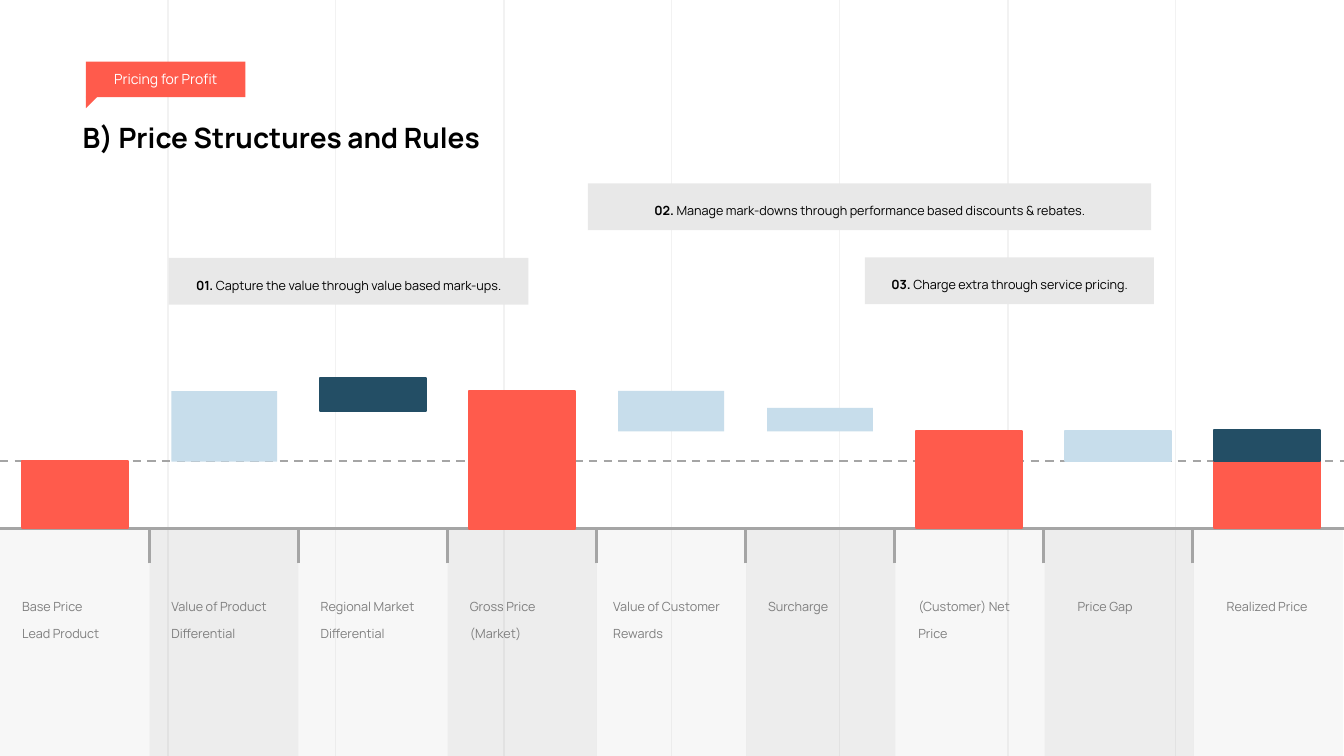
from pptx import Presentation
from pptx.dml.color import RGBColor
from pptx.enum.dml import MSO_LINE
from pptx.enum.shapes import MSO_CONNECTOR, MSO_SHAPE
from pptx.enum.text import MSO_ANCHOR, PP_ALIGN
from pptx.oxml.ns import qn
from pptx.util import Pt
from lxml.etree import SubElement


class Theme:
    font = "Manrope"
    title, tag, body = 20, 10, 9
    black, white = "000000", "FFFFFF"
    red, navy, sky = "FF5B4C", "234E65", "C7DDEB"
    note, label, rule, pale, grid = "E8E8E8", "7F7F7F", "A5A5A5", "D8D8D8", "F2F2F2"


WIDE, HIGH = 960, 540
STEP = 106.6  # column width
BASE = 377.3  # axis height on the slide
LEVEL = 329  # base price level

deck = Presentation()
deck.slide_width, deck.slide_height = Pt(WIDE), Pt(HIGH)
slide = deck.slides.add_slide(deck.slide_layouts[6])
shapes = slide.shapes


def box(x, y, w, h, fill, kind=MSO_SHAPE.RECTANGLE, edge=False, alpha=None):
    """Draw a filled shape; edge adds an outline in the fill colour."""
    shape = shapes.add_shape(kind, Pt(x), Pt(y), Pt(w), Pt(h))
    shape.shadow.inherit = False
    shape.fill.solid()
    shape.fill.fore_color.rgb = RGBColor.from_string(fill)
    if edge:
        shape.line.color.rgb = RGBColor.from_string(fill)
        shape.line.width = Pt(1.5)
    else:
        shape.line.fill.background()
    if alpha:
        tint = shape.fill._xPr.find(f"{qn('a:solidFill')}/{qn('a:srgbClr')}")
        SubElement(tint, qn("a:alpha")).set("val", str(alpha * 1000))
    return shape


def rule(x1, y1, x2, y2, color, width):
    line = shapes.add_connector(MSO_CONNECTOR.STRAIGHT, Pt(x1), Pt(y1), Pt(x2), Pt(y2))
    line.line.color.rgb = RGBColor.from_string(color)
    line.line.width = Pt(width)
    SubElement(line._element.spPr, qn("a:effectLst"))
    return line


# Background grid
for i in range(1, 8):
    rule(120 * i, 0, 120 * i, HIGH, Theme.grid, 0.75)

# Each text: shape, runs as (words, bold), size, colour, line spacing, align, anchor
texts = []
mid, top = MSO_ANCHOR.MIDDLE, MSO_ANCHOR.TOP
left, center = PP_ALIGN.LEFT, PP_ALIGN.CENTER

# Heading and tag
head = shapes.add_textbox(Pt(59), Pt(81.4), Pt(439), Pt(33))
texts.append((head, [("B) Price Structures and Rules", True)],
              Theme.title, Theme.black, 1.0, left, mid))
tag = box(61.4, 44, 114, 25.4, Theme.red)
texts.append((tag, [("Pricing for Profit", False)],
              Theme.tag, Theme.white, 1.0, center, mid))
tail = box(61.4, 69.3, 8, 8, Theme.red, MSO_SHAPE.RIGHT_TRIANGLE)
tail.rotation = 90

# Numbered notes
notes = [
    (120.5, 184.2, 257, "Capture the value through value based mark-ups."),
    (420, 131, 402.3, "Manage mark-downs through performance based discounts & rebates."),
    (617.8, 183.9, 206.5, "Charge extra through service pricing."),
]
for n, (x, y, w, words) in enumerate(notes, 1):
    note = box(x, y, w, 33.4, Theme.note)
    texts.append((note, [(f"{n:02}. ", True), (words, False)],
                  Theme.body, Theme.black, 1.53, center, mid))

# Price level, columns, axis and ticks
level = rule(0, LEVEL, WIDE, LEVEL, Theme.rule, 1.5)
level.line.dash_style = MSO_LINE.DASH
for i in range(9):
    shade = Theme.rule if i % 2 else Theme.pale
    box(STEP * i, BASE, STEP, HIGH - BASE, shade, alpha=20)
rule(0, BASE, WIDE, BASE, Theme.rule, 2)
for i in range(1, 9):
    rule(106.5 * i, 402.5, 106.5 * i, BASE, Theme.rule, 2)

# Each step: label, its left and width, then bars as (top, height, colour, edge)
steps = [
    ("Base Price Lead Product", 15.8, 60, [(329.5, 48, Theme.red, True)]),
    ("Value of Product Differential", 122.4, 77, [(279.4, 50.4, Theme.sky, False)]),
    ("Regional Market Differential", 229, 72, [(270, 23.7, Theme.navy, True)]),
    ("Gross Price (Market)", 335.6, 60, [(279.4, 98.4, Theme.red, True)]),
    ("Value of Customer Rewards", 438, 89, [(279.2, 29, Theme.sky, False)]),
    ("Surcharge", 548.6, 60, [(291.4, 16.8, Theme.sky, False)]),
    ("(Customer) Net Price", 656, 67, [(308, 69.3, Theme.red, True)]),
    ("Price Gap", 769.7, 67, [(308, 21.4, Theme.sky, True)]),
    ("Realized Price", 876.2, 60,
     [(328.3, 49, Theme.red, True), (307, 22.3, Theme.navy, True)]),
]
for i, (label, x, w, bars) in enumerate(steps):
    for y, h, color, edge in bars:
        box(16 + 106.4 * i, y, 75.6, h, color, edge=edge)
    name = shapes.add_textbox(Pt(x), Pt(415.6), Pt(w), Pt(38.2))
    texts.append((name, [(label, False)],
                  Theme.body, Theme.label, 1.8, left, top))

for shape, runs, size, color, space, align, anchor in texts:
    frame = shape.text_frame
    frame.word_wrap = True
    frame.margin_left = frame.margin_right = 0
    frame.vertical_anchor = anchor
    para = frame.paragraphs[0]
    para.alignment = align
    para.line_spacing = space
    for words, bold in runs:
        run = para.add_run()
        run.text = words
        run.font.name = Theme.font
        run.font.size = Pt(size)
        run.font.bold = bold
        run.font.color.rgb = RGBColor.from_string(color)

deck.save("out.pptx")
